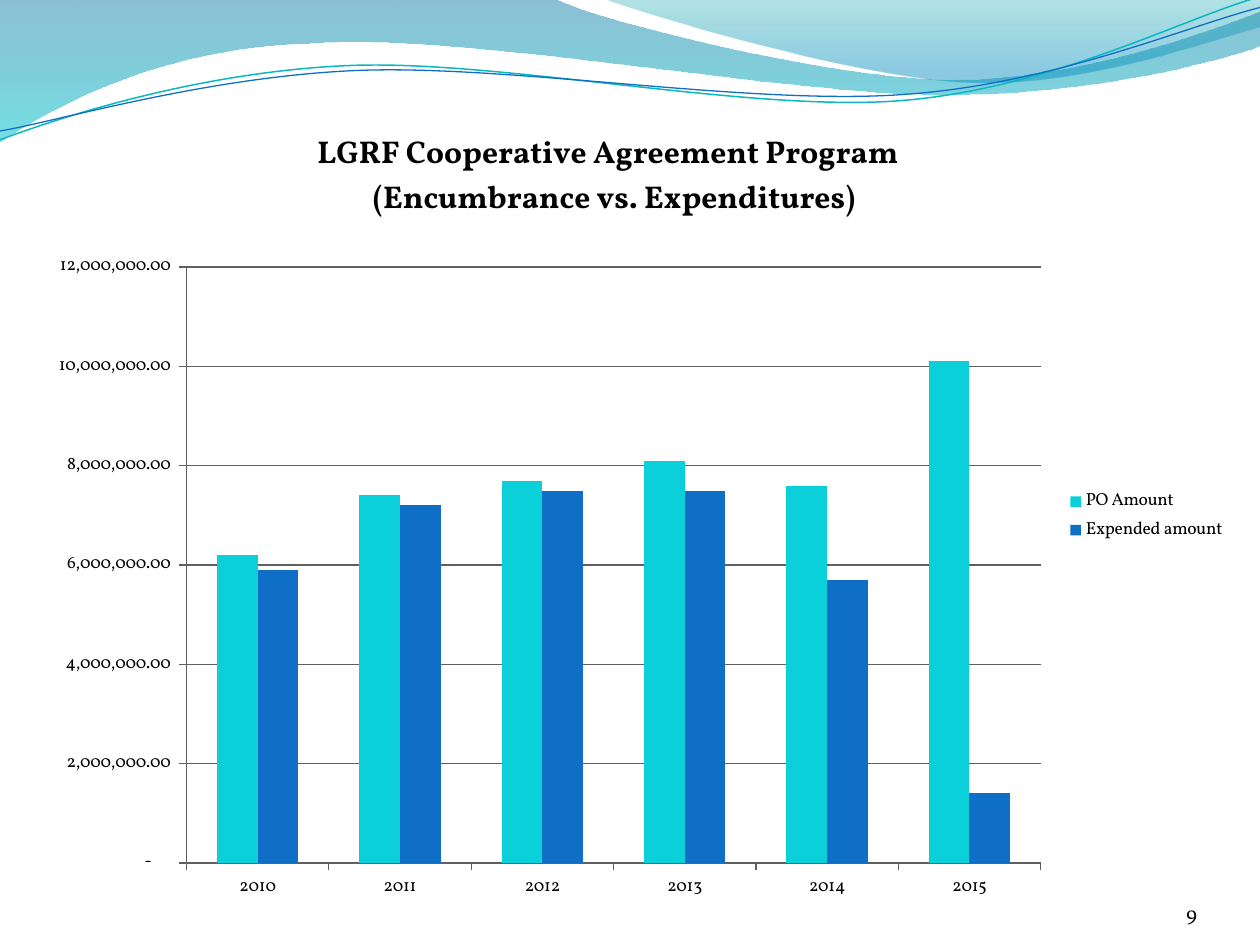
from math import cos, radians, sin
from pptx import Presentation
from pptx.chart.data import CategoryChartData
from pptx.dml.color import RGBColor
from pptx.enum.chart import XL_CHART_TYPE as ChartType, XL_LEGEND_POSITION as LegendAt, XL_TICK_MARK as Tick
from pptx.enum.text import MSO_ANCHOR as Anchor, PP_ALIGN as Align
from pptx.oxml.ns import qn
from pptx.util import Inches, Pt
from lxml.etree import SubElement, Element

FONT = "Vollkorn"
BLACK, GRID = "000000", "606060"
TITLE = ["LGRF Cooperative Agreement Program ", " (Encumbrance vs. Expenditures)"]
PAGE_NUMBER = "9"
YEARS = ["2010", "2011", "2012", "2013", "2014", "2015"]
SERIES = [
    ("PO Amount", "0BD0D9", [6200000, 7400000, 7700000, 8100000, 7600000, 10100000]),
    ("Expended amount", "0F6FC6", [5900000, 7200000, 7500000, 7500000, 5700000, 1400000]),
]
AMOUNT_FORMAT = r'_(* #,##0.00_);_(* \(#,##0.00\);_(* "-"??_);_(@_)'
CHART_BOX = (0.25, 0.92, 9.58, 6.35)
PLOT_BOX = (1.48, 2.12, 6.78, 4.73)
TITLE_AT = (2.49, 1.01)

# Each step is one point for a straight edge or three points for a Bezier curve.
BANDS = [
    ((0, 0), [
        [(4.4, -0.01)],
        [(4.76, 0.17), (6.64, 0.63), (7.58, 0.63)],
        [(8.53, 0.63), (9.58, 0.26), (10, 0.09)],
        [(10.01, 0.36)],
        [(9.83, 0.44), (8.7, 0.76), (7.46, 0.75)],
        [(6.22, 0.75), (3.82, 0.28), (2.57, 0.34)],
        [(1.29, 0.36), (0.46, 0.83), (-0.01, 1.13)],
        [(0, 0)],
    ], [(0, "0074A1", 45), (1, "00C6CF", 55)]),
    ((4.79, -0.01), [
        [(5.09, 0.11), (6.82, 0.62), (7.69, 0.65)],
        [(8.56, 0.69), (9.61, 0.32), (10, 0.21)],
        [(10, 0)],
        [(4.79, -0.01)],
    ], [(0, "00A1A9", 30), (0.8, "008BBF", 45)]),
]
TILT = -2.7
WAVES = [
    ((0, 1.11), [
        [(0.48, 0.93), (1.58, 0.57), (2.77, 0.52)],
        [(3.95, 0.47), (5.93, 0.89), (7.13, 0.8)],
        [(8.33, 0.71), (9.38, 0.15), (9.98, -0.02)],
    ], (4.99, 0.57), "0AB8BF", 0.85),
    ((0, 1.04), [
        [(0.47, 0.96), (1.64, 0.61), (2.83, 0.56)],
        [(4.03, 0.51), (5.97, 0.84), (7.17, 0.75)],
        [(8.36, 0.67), (9.41, 0.21), (10, 0.06)],
    ], (5, 0.59), "0F6FC6", 0.75),
]


def rgb(color):
    return RGBColor.from_string(color)


def add_outline(slide, start, steps, close):
    builder = slide.shapes.build_freeform(Inches(start[0]), Inches(start[1]))
    corners = [(Inches(x), Inches(y)) for step in steps for x, y in step]
    builder.add_line_segments(corners, close=close)
    outline = builder.convert_to_shape()
    outline.shadow.inherit = False
    edges = iter(list(outline.element.iter(qn("a:lnTo"))))
    for step in steps:
        first, *others = [next(edges) for _ in step]
        if others:
            first.tag = qn("a:cubicBezTo")
            for edge in others:
                first.append(edge[0])
                edge.getparent().remove(edge)
    return outline


def add_band(slide, start, steps, stops):
    band = add_outline(slide, start, steps, True)
    band.line.fill.background()
    band.fill.gradient()
    band.fill.gradient_angle = 270
    for stop, (position, color, _) in zip(band.fill.gradient_stops, stops):
        stop.position = position
        stop.color.rgb = rgb(color)
    for tint, (_, _, opacity) in zip(band.element.iter(qn("a:srgbClr")), stops):
        SubElement(tint, qn("a:alpha")).set("val", str(opacity * 1000))


def turn(point, center, degrees):
    angle = radians(degrees)
    dx, dy = point[0] - center[0], point[1] - center[1]
    return (center[0] + dx * cos(angle) - dy * sin(angle),
            center[1] + dx * sin(angle) + dy * cos(angle))


def add_wave(slide, start, steps, center, color, width):
    level = [[turn(point, center, -TILT) for point in step] for step in steps]
    wave = add_outline(slide, turn(start, center, -TILT), level, False)
    wave.rotation = TILT
    wave.fill.background()
    wave.line.color.rgb = rgb(color)
    wave.line.width = Pt(width)


def style(font, size, bold=False):
    font.name, font.size, font.bold = FONT, Pt(size), bold
    font.color.rgb = rgb(BLACK)


def place(part, index, left, top, width=None, height=None):
    """Place a chart part by inches on the slide."""
    for old in part.findall(qn("c:layout")):
        part.remove(old)
    layout = Element(qn("c:layout"))
    part.insert(index, layout)
    manual = SubElement(layout, qn("c:manualLayout"))
    x, y, w, h = CHART_BOX
    settings = [("xMode", "edge"), ("yMode", "edge"), ("x", (left - x) / w), ("y", (top - y) / h)]
    if width:
        settings = [("layoutTarget", "inner"), *settings, ("w", width / w), ("h", height / h)]
    for tag, value in settings:
        SubElement(manual, qn(f"c:{tag}")).set("val", str(value))


def add_spending_chart(slide):
    spending = CategoryChartData()
    spending.categories = YEARS
    for name, _, amounts in SERIES:
        spending.add_series(name, amounts)
    chart = slide.shapes.add_chart(
        ChartType.COLUMN_CLUSTERED, *map(Inches, CHART_BOX), spending).chart
    style(chart.font, 10)

    title = chart.chart_title
    frame = title.text_frame
    for i, text in enumerate(TITLE):
        line = frame.add_paragraph() if i else frame.paragraphs[0]
        run = line.add_run()
        run.text = text
        style(run.font, 18, True)
    place(title._element, 1, *TITLE_AT)

    columns = chart.plots[0]
    columns.gap_width, columns.overlap, columns.vary_by_categories = 150, 0, False
    for series, (_, color, _) in zip(columns.series, SERIES):
        series.format.fill.solid()
        series.format.fill.fore_color.rgb = rgb(color)
    place(columns._element.getparent(), 0, *PLOT_BOX)

    amounts = chart.value_axis
    amounts.minimum_scale, amounts.maximum_scale, amounts.major_unit = 0, 12000000, 2000000
    amounts.has_major_gridlines = True
    amounts.tick_labels.number_format = AMOUNT_FORMAT
    amounts.tick_labels.number_format_is_linked = False
    for axis in (chart.category_axis, amounts):
        axis.major_tick_mark, axis.minor_tick_mark = Tick.OUTSIDE, Tick.NONE
    for ruled in (chart.category_axis, amounts, amounts.major_gridlines):
        ruled.format.line.color.rgb = rgb(GRID)
        ruled.format.line.width = Pt(0.75)

    chart.has_legend = True
    chart.legend.position = LegendAt.RIGHT
    chart.legend.include_in_layout = False
    style(chart.legend.font, 10)


def add_page_number(slide):
    frame = slide.shapes.add_textbox(*map(Inches, (8.67, 6.95, 0.83, 0.4))).text_frame
    frame.word_wrap = True
    frame.vertical_anchor = Anchor.BOTTOM
    frame.margin_left = frame.margin_right = frame.margin_top = frame.margin_bottom = 0
    line = frame.paragraphs[0]
    line.alignment = Align.RIGHT
    run = line.add_run()
    run.text = PAGE_NUMBER
    style(run.font, 12)


def main():
    deck = Presentation()
    deck.slide_width, deck.slide_height = Inches(10), Inches(7.5)
    slide = deck.slides.add_slide(deck.slide_layouts[6])
    for band in BANDS:
        add_band(slide, *band)
    for wave in WAVES:
        add_wave(slide, *wave)
    add_page_number(slide)
    add_spending_chart(slide)
    deck.save("out.pptx")


if __name__ == "__main__":
    main()
